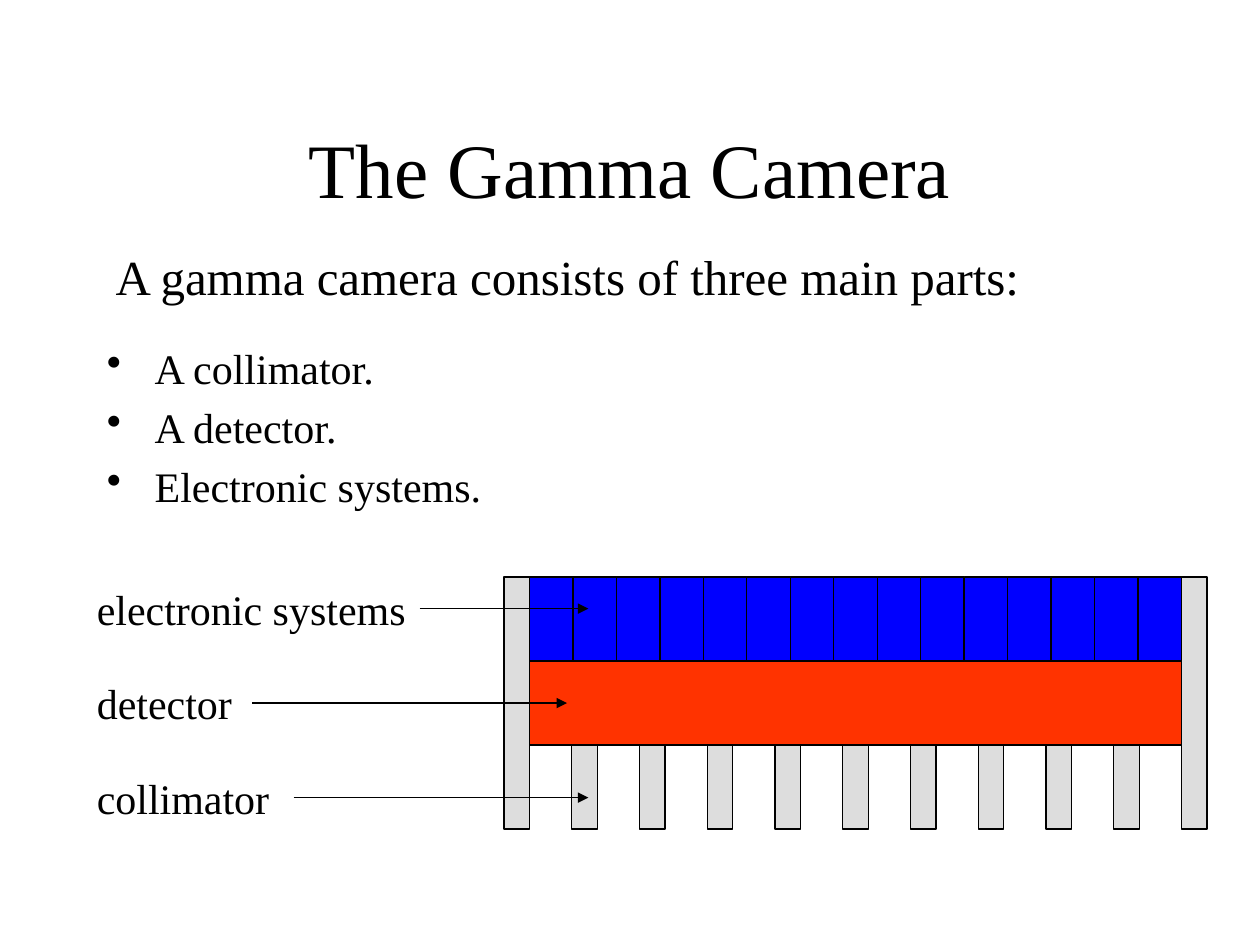
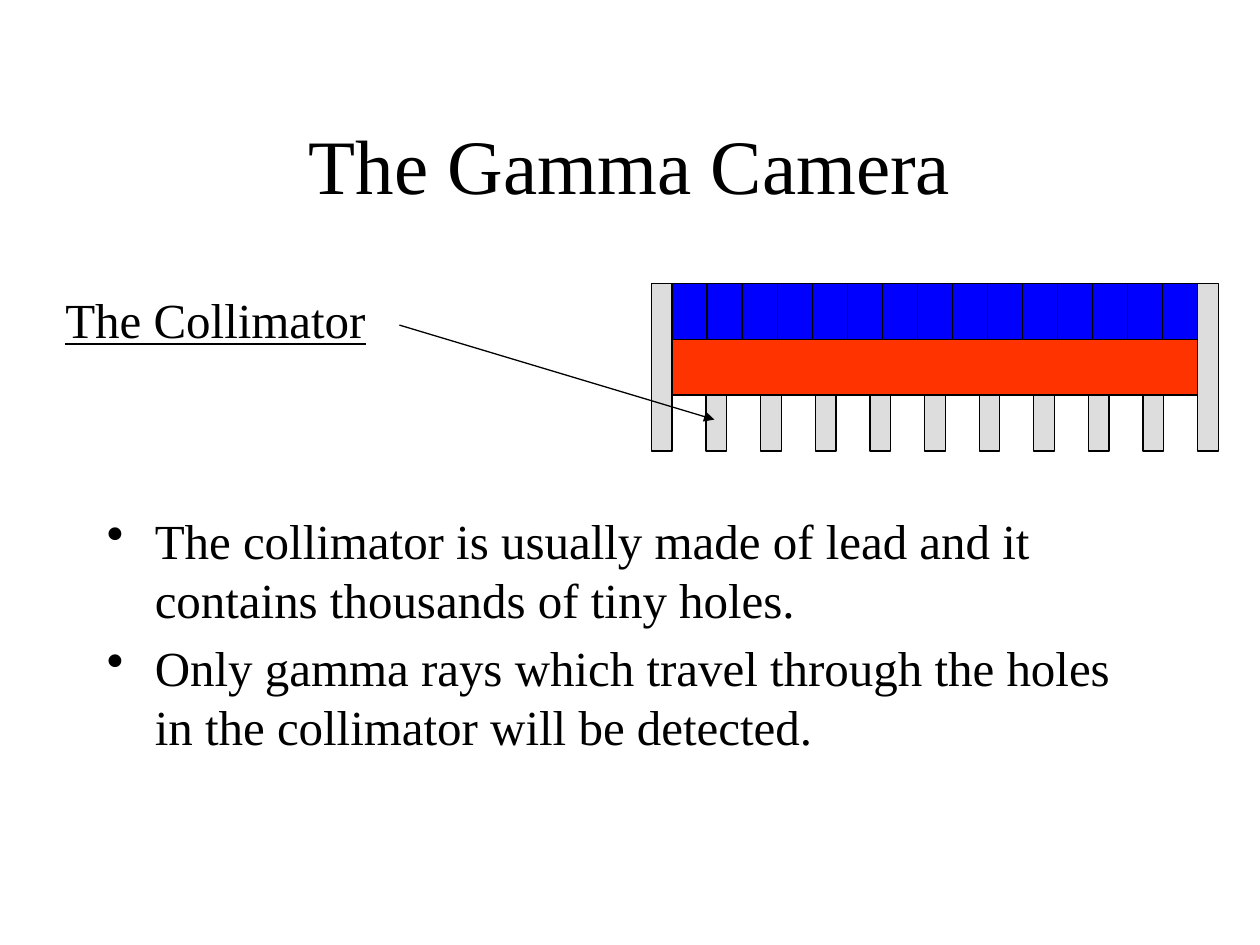
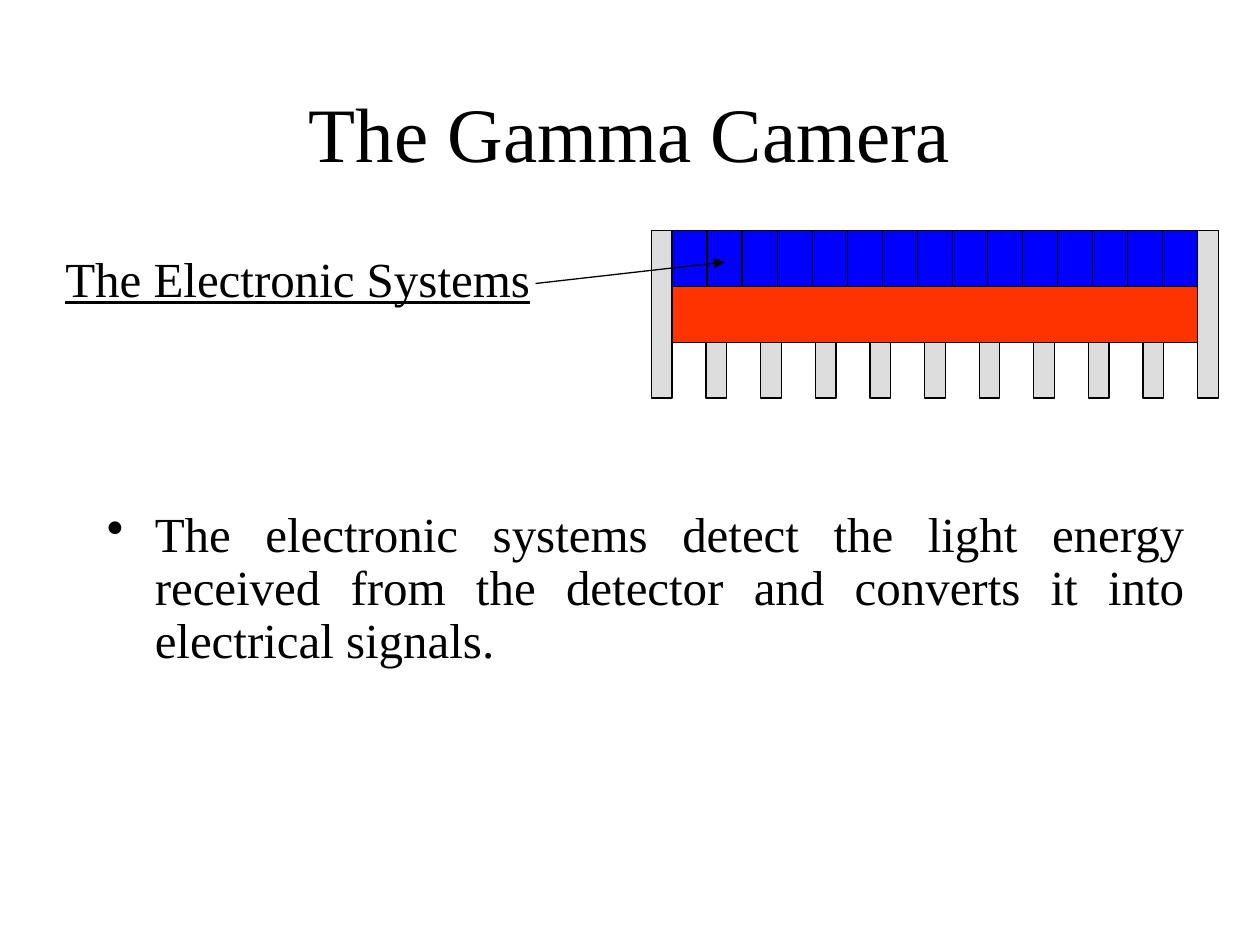
from pptx import Presentation
from pptx.dml.color import RGBColor
from pptx.enum.shapes import MSO_CONNECTOR, MSO_SHAPE
from pptx.enum.text import MSO_ANCHOR, PP_ALIGN
from pptx.oxml.ns import qn
from pptx.util import Inches, Pt
from lxml import etree

BLACK = RGBColor(0x00, 0x00, 0x00)
GREY = RGBColor(0xDD, 0xDD, 0xDD)
RED = RGBColor(0xFF, 0x33, 0x00)
BLUE = RGBColor(0x00, 0x00, 0xFF)
FONT = "Times New Roman"
RECT, STRAIGHT = MSO_SHAPE.RECTANGLE, MSO_CONNECTOR.STRAIGHT
LEFT, CENTER, JUSTIFY = PP_ALIGN.LEFT, PP_ALIGN.CENTER, PP_ALIGN.JUSTIFY
TOP, MIDDLE = MSO_ANCHOR.TOP, MSO_ANCHOR.MIDDLE
RIGHT_SIDE = 3
CELLS, GAPS = 15, 10


def add_bullet(p):
    pPr = p._p.get_or_add_pPr()
    pPr.set("marL", str(Inches(0.38)))
    pPr.set("indent", str(-Inches(0.38)))
    etree.SubElement(pPr, qn("a:buChar")).set("char", "•")


def write(tf, lines, size=28, align=LEFT, bullets=False, underline=False,
          spacing=None):
    for i, line in enumerate(lines):
        p = tf.add_paragraph() if i else tf.paragraphs[0]
        if bullets:
            add_bullet(p)
        p.alignment = align
        if spacing:
            p.line_spacing = spacing
        if i:
            p.space_before = Pt(size * 0.2)
        r = p.add_run()
        r.text = line
        r.font.name, r.font.size = FONT, Pt(size)
        r.font.color.rgb = BLACK
        r.font.underline = underline


class Deck:
    def __init__(self):
        self.prs = Presentation()
        self.prs.slide_width, self.prs.slide_height = Inches(10), Inches(7.5)
        self.s = None

    def new_slide(self, title_top, title_height):
        self.s = self.prs.slides.add_slide(self.prs.slide_layouts[6])
        self.text(["The Gamma Camera"], 0.75, title_top, 8.5, title_height,
                  wrap=True, anchor=MIDDLE, size=44, align=CENTER)

    def text(self, lines, left, top, width, height, wrap=False, anchor=TOP,
             **style):
        box = self.s.shapes.add_textbox(Inches(left), Inches(top),
                                        Inches(width), Inches(height))
        tf = box.text_frame
        tf.word_wrap, tf.vertical_anchor = wrap, anchor
        write(tf, lines, **style)
        return box

    def bullets(self, lines, top, width, height, **style):
        self.text(lines, 0.75, top, width, height, wrap=True, bullets=True,
                  **style)

    def heading(self, line, top, width):
        self.text([line], 0.42, top, width, 0.57, underline=True)

    def rect(self, group, left, top, width, height, color):
        sp = group.shapes.add_shape(RECT, Inches(left), Inches(top),
                                    Inches(width), Inches(height))
        sp.shadow.inherit = False
        sp.fill.solid()
        sp.fill.fore_color.rgb = color
        sp.line.color.rgb = BLACK
        sp.line.width = Pt(0.75)

    def arrow(self, x1, y1, x2, y2):
        line = self.s.shapes.add_connector(STRAIGHT, Inches(x1), Inches(y1),
                                           Inches(x2), Inches(y2))
        line.line.color.rgb = BLACK
        line.line.width = Pt(0.75)
        ln = line.line._get_or_add_ln()
        etree.SubElement(ln, qn("a:tailEnd")).set("type", "triangle")
        etree.SubElement(line._element.spPr, qn("a:effectLst"))
        return line

    def camera(self, left, top, width, height):
        group = self.s.shapes.add_group_shape()
        wall, layer = width / 27.5, height / 3
        inner = width - 2 * wall
        # Collimator: the two outer bars are the full-height walls
        for i in range(GAPS + 1):
            drop = 0 if i in (0, GAPS) else 2 * layer
            self.rect(group, left + i * (width - wall) / GAPS, top + drop,
                      wall, height - drop, GREY)
        # Detector
        self.rect(group, left + wall, top + layer, inner, layer, RED)
        # Electronic systems
        cell = inner / CELLS
        for i in range(CELLS):
            self.rect(group, left + wall + i * cell, top, cell, layer, BLUE)


def main():
    deck = Deck()

    # Slide 1: the three parts
    deck.new_slide(0.83, 1)
    deck.bullets(["A collimator.", "A detector.", "Electronic systems."],
                 2.67, 4.17, 1.75, size=24)
    deck.text(["A gamma camera consists of three main parts:"],
              0.82, 1.91, 7.39, 0.57)
    deck.camera(4, 4.58, 5.58, 2)
    labels = [("electronic systems", 2.66, 0, 4.67),
              ("detector", 1.27, 0.06, 4.5),
              ("collimator", 1.57, 0.09, 4.67)]
    for i, (label, width, gap, tip) in enumerate(labels):
        top = 4.58 + i * 0.75
        box = deck.text([label], 0.67, top, width, 0.5, size=24)
        line = deck.arrow(0.67 + width + gap, top + 0.25, tip, top + 0.25)
        if not gap:
            line.begin_connect(box, RIGHT_SIDE)

    # Slide 2: the collimator
    deck.new_slide(0.67, 1.25)
    deck.bullets(["The collimator is usually made of lead and it contains "
                  "thousands of tiny holes.",
                  "Only gamma rays which travel through the holes in the "
                  "collimator will be detected."], 4, 8.42, 2.58)
    deck.heading("The Collimator", 2.25, 2.59)
    deck.camera(5.17, 2.25, 4.5, 1.33)
    deck.arrow(3.17, 2.58, 5.67, 3.33)

    # Slide 3: the electronic systems
    deck.new_slide(0.42, 1.25)
    deck.bullets(["The electronic systems detect the light energy received "
                  "from the detector and converts it into electrical "
                  "signals."], 4, 8.75, 1.25, align=JUSTIFY, spacing=0.9)
    deck.heading("The Electronic Systems", 1.92, 3.89)
    deck.camera(5.17, 1.83, 4.5, 1.33)
    deck.arrow(4.25, 2.25, 5.75, 2.08)

    deck.prs.save("out.pptx")


if __name__ == "__main__":
    main()
